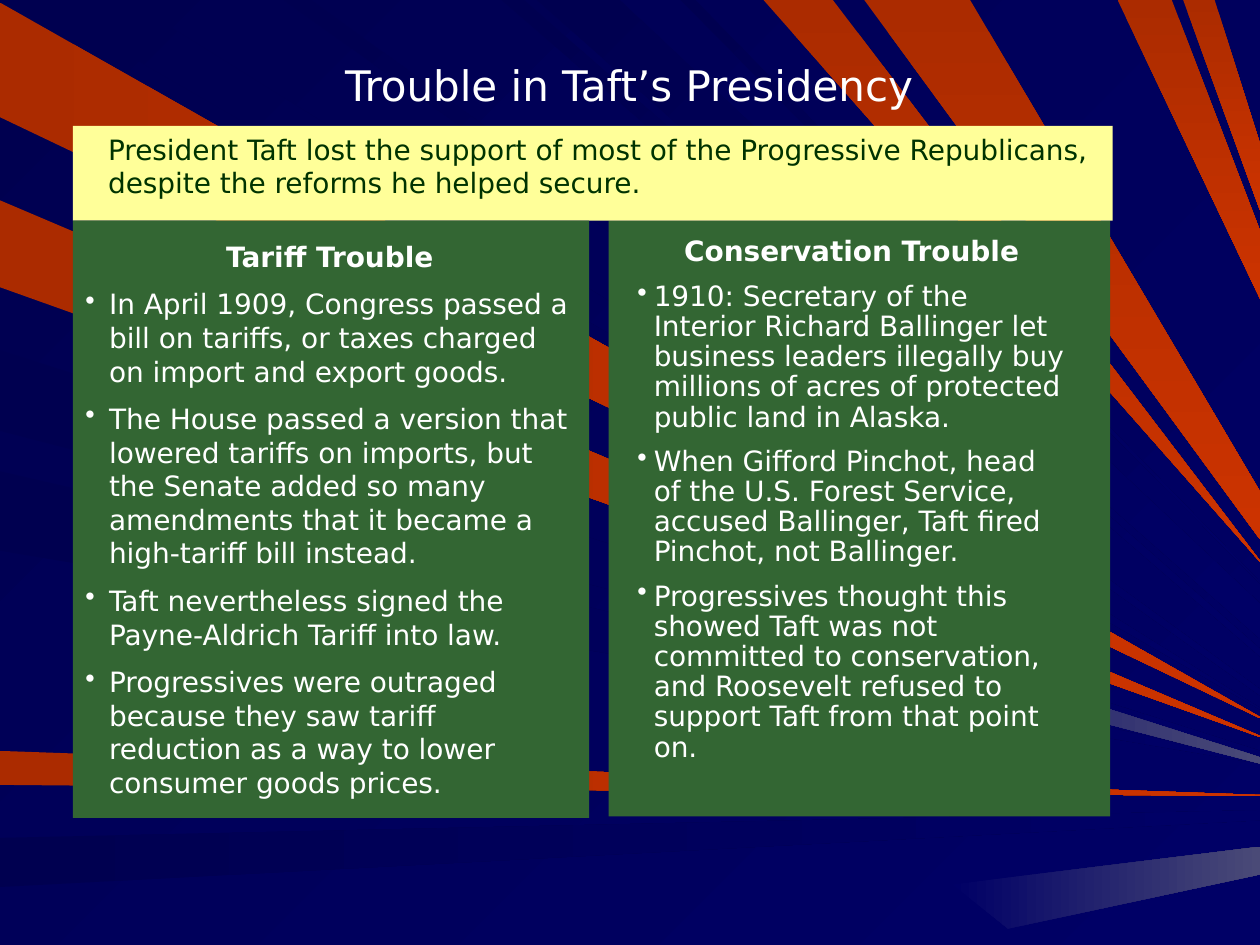
from dataclasses import dataclass

from lxml import etree
from pptx import Presentation
from pptx.dml import color
from pptx.enum import shapes, text
from pptx.oxml import ns
from pptx.util import Cm, Pt


@dataclass(frozen=True)
class Theme:
    """Colours, font and type sizes of the slide."""
    font: str = "DejaVu Sans"
    title_size: int = 24
    body_size: int = 16
    paragraph_gap: int = 8
    white: str = "FFFFFF"
    panel: str = "336633"
    banner: str = "FFFF99"
    banner_text: str = "003300"
    night: str = "000066"
    night_dark: str = "000050"
    glow: str = "4A4A77"
    flame: str = "CC3300"
    flame_dark: str = "AB2B00"


THEME = Theme()
RAY_UNIT = Cm(0.0254)
RIGHT_EDGE = 1000

LEFT_FLAMES = [(2, 93, 569, 570), (159, 228, 584, 585), (596, 623, 631, 632)]
LEFT_NIGHTS = [(278, 342, 596, 602), (374, 437, 605, 606), (665, 704, 643, 651)]
TOP_NIGHTS = [(26, 101, 562, 563), (225, 247, 547, 552), (398, 416, 515, 521),
              (426, 492, 479, 507), (540, 552, 462, 463)]
TOP_FLAMES = [(606, 661, 445, 446), (686, 770, 390, 428), (887, 930, 183, 237),
              (939, 964, 114, 167)]
GLOWS = [[(756, 702), (1000, 672), (1000, 694), (800, 737)],
         [(637, 485), (1000, 601), (1000, 606), (633, 511)]]

TITLE = "Trouble in Taft’s Presidency"
SUMMARY = ("President Taft lost the support of most of the Progressive Republicans, "
           "despite the reforms he helped secure.")
TARIFF = [
    "In April 1909, Congress passed a bill on tariffs, or taxes charged on import and "
    "export goods.",
    "The House passed a version that lowered tariffs on imports, but the Senate added so "
    "many amendments that it became a high-tariff bill instead.",
    "Taft nevertheless signed the Payne-Aldrich Tariff into law.",
    "Progressives were outraged because they saw tariff reduction as a way to lower "
    "consumer goods prices.",
]
CONSERVATION = [
    "1910: Secretary of the Interior Richard Ballinger let business leaders illegally buy "
    "millions of acres of protected public land in Alaska.",
    "When Gifford Pinchot, head of the U.S. Forest Service, accused Ballinger, Taft fired "
    "Pinchot, not Ballinger.",
    "Progressives thought this showed Taft was not committed to conservation, and Roosevelt "
    "refused to support Taft from that point on.",
]


def rgb(value):
    """Turn a hex string into a colour."""
    return color.RGBColor.from_string(value)


def set_gradient(fill, start, end, angle):
    """Fill with a two-colour gradient turned clockwise by the angle."""
    fill.gradient()
    fill.gradient_angle = -angle % 360
    for stop, value in zip(fill.gradient_stops, (start, end)):
        stop.color.rgb = rgb(value)


def add_ray(group, points, start, end, angle):
    """Draw one light ray through the given corners."""
    builder = group.shapes.build_freeform(*points[0], scale=RAY_UNIT)
    builder.add_line_segments(points[1:], close=True)
    shape = builder.convert_to_shape()
    set_gradient(shape.fill, start, end, angle)
    shape.line.fill.background()
    shape.shadow.inherit = False


def add_rays(slide):
    """Draw the fan of rays from the left and top edges to the right edge."""
    group = slide.shapes.add_group_shape()
    flame = THEME.flame_dark, THEME.flame
    night = THEME.night_dark, THEME.night
    fans = [(LEFT_FLAMES, False, flame, 0), (LEFT_NIGHTS, False, night, 0),
            (TOP_NIGHTS, True, night, 45), (TOP_FLAMES, True, flame, 90)]
    for rays, from_top, colours, angle in fans:
        for first, last, upper, lower in rays:
            if from_top:
                edge = [(first, 0), (last, 0)]
            else:
                edge = [(0, last), (0, first)]
            points = edge + [(RIGHT_EDGE, upper), (RIGHT_EDGE, lower)]
            add_ray(group, points, *colours, angle)
    for points in GLOWS:
        add_ray(group, points, THEME.night, THEME.glow, 0)


def add_panel(slide, box, fill):
    """Add a plain filled rectangle."""
    shape = slide.shapes.add_shape(shapes.MSO_SHAPE.RECTANGLE, *map(Cm, box))
    shape.fill.solid()
    shape.fill.fore_color.rgb = rgb(fill)
    shape.line.fill.background()
    shape.shadow.inherit = False


def add_text(slide, box):
    """Add an empty wrapping text box and return its frame."""
    frame = slide.shapes.add_textbox(*map(Cm, box)).text_frame
    frame.word_wrap = True
    frame.vertical_anchor = text.MSO_ANCHOR.TOP
    return frame


def write(paragraph, words, size, ink, bold=False, centred=False):
    """Write one paragraph in the theme font."""
    paragraph.text = words
    paragraph.alignment = text.PP_ALIGN.CENTER if centred else text.PP_ALIGN.LEFT
    font = paragraph.font
    font.name, font.size, font.bold = THEME.font, Pt(size), bold
    font.color.rgb = rgb(ink)


def set_indent(paragraph, margin, bullet=False):
    """Indent a paragraph, hanging a bullet in the margin if asked."""
    properties = paragraph._p.get_or_add_pPr()
    properties.set("marL", str(Cm(margin)))
    if bullet:
        properties.set("indent", str(-Cm(margin)))
        etree.SubElement(properties, ns.qn("a:buChar"), char="•")


def add_column(slide, box, heading, points, indent, spacing):
    """Add a bold heading followed by bulleted points."""
    frame = add_text(slide, box)
    write(frame.paragraphs[0], heading, THEME.body_size, THEME.white, bold=True, centred=True)
    for words in points:
        paragraph = frame.add_paragraph()
        set_indent(paragraph, indent, bullet=True)
        paragraph.space_before = Pt(THEME.paragraph_gap)
        write(paragraph, words, THEME.body_size, THEME.white)
    for paragraph in frame.paragraphs:
        paragraph.line_spacing = spacing


def main():
    """Build the slide and save it."""
    presentation = Presentation()
    presentation.slide_width, presentation.slide_height = Cm(25.4), Cm(19.05)
    slide = presentation.slides.add_slide(presentation.slide_layouts[6])
    set_gradient(slide.background.fill, THEME.night_dark, THEME.night, 45)
    add_rays(slide)

    title = add_text(slide, (1.47, 1.07, 22.43, 1.55))
    write(title.paragraphs[0], TITLE, THEME.title_size, THEME.white, centred=True)

    add_panel(slide, (12.27, 4.45, 10.11, 12.01), THEME.panel)
    add_column(slide, (12.6, 4.67, 9.14, 11.07), "Conservation Trouble", CONSERVATION, 0.33, 0.9)

    add_panel(slide, (1.47, 2.54, 20.96, 1.91), THEME.banner)
    summary = add_text(slide, (1.47, 2.54, 20.96, 1.63)).paragraphs[0]
    set_indent(summary, 0.46)
    write(summary, SUMMARY, THEME.body_size, THEME.banner_text)

    add_panel(slide, (1.47, 4.45, 10.41, 12.04), THEME.panel)
    add_column(slide, (1.47, 4.7, 10.36, 11.81), "Tariff Trouble", TARIFF, 0.48, 1.0)
    presentation.save("out.pptx")


if __name__ == "__main__":
    main()
